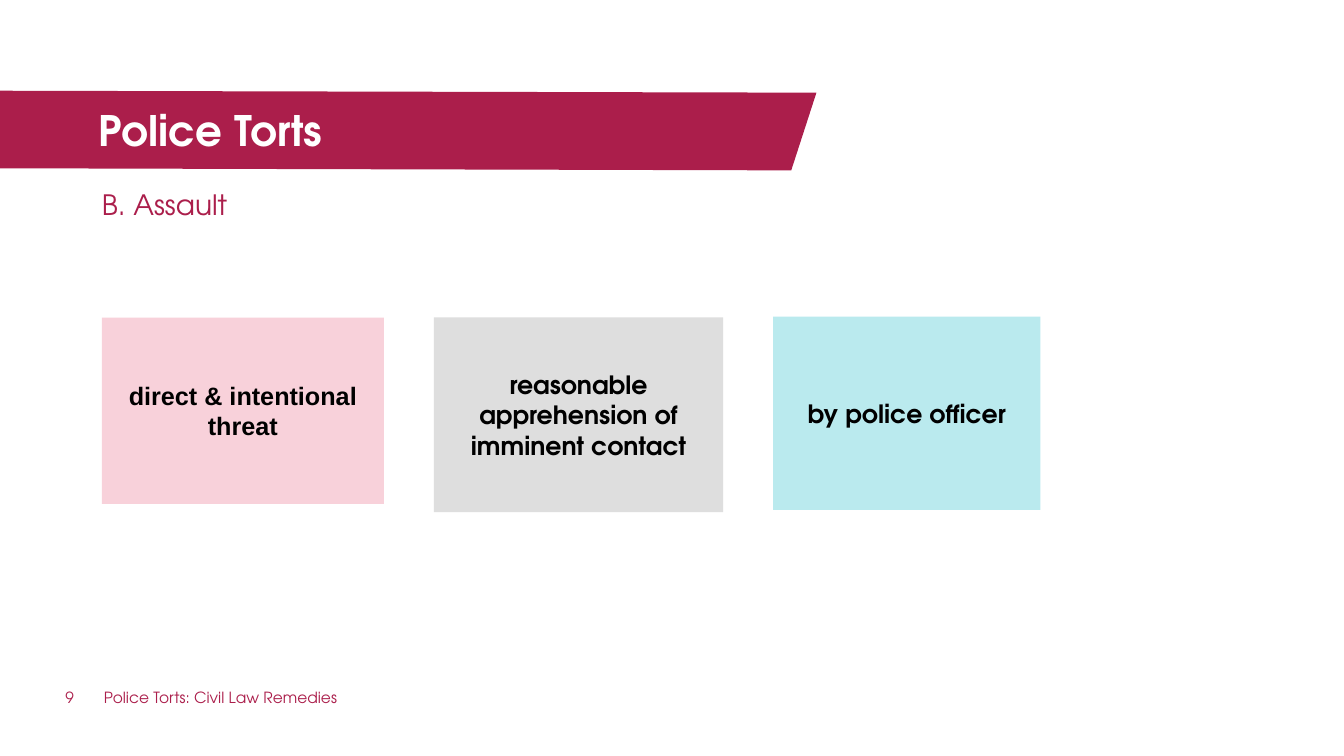
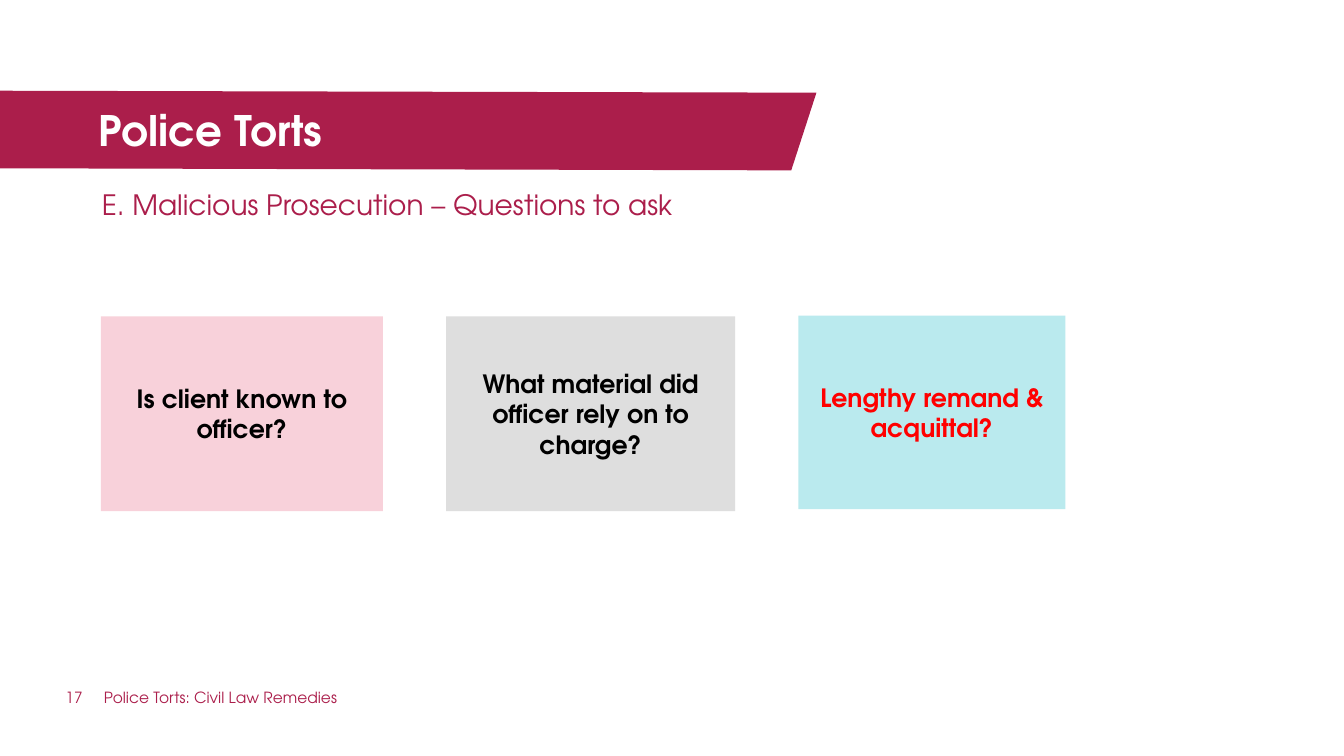
from pptx import Presentation
from pptx.dml.color import RGBColor
from pptx.enum.shapes import MSO_SHAPE
from pptx.enum.text import MSO_ANCHOR, PP_ALIGN
from pptx.util import Pt

CRIMSON = RGBColor(0xAB, 0x1E, 0x4B)
WHITE = RGBColor(0xFF, 0xFF, 0xFF)
BLACK = RGBColor(0, 0, 0)
RED = RGBColor(0xFF, 0, 0)
PINK = RGBColor(0xF8, 0xD1, 0xDA)
GREY = RGBColor(0xDE, 0xDE, 0xDE)
AQUA = RGBColor(0xBA, 0xEA, 0xEE)

FONT = "TeX Gyre Adventor"
TITLE = dict(name=FONT, size=Pt(30), bold=True, color=WHITE)
SUBTITLE = dict(name=FONT, size=Pt(20), color=CRIMSON)
FOOTER = dict(name=FONT, size=Pt(11), color=CRIMSON)
CARD = dict(name=FONT, size=Pt(18), bold=True, color=BLACK)

# Card columns: fill, width, offset from the top of the row
COLUMNS = [(PINK, 201.6, 0), (GREY, 206.6, 0), (AQUA, 190.8, -0.7)]
BAND = [(0, 64.8), (583.2, 66.2), (565.2, 121.7), (0, 120.2)]


class Deck:
    def __init__(self):
        self.prs = Presentation()
        self.prs.slide_width, self.prs.slide_height = Pt(960), Pt(540)
        self.s = None

    def fill_text(self, tf, text, style, **paragraph):
        tf.word_wrap = True
        p = tf.paragraphs[0]
        for key, value in paragraph.items():
            setattr(p, key, value)
        r = p.add_run()
        r.text = text
        for key, value in style.items():
            if key == "color":
                r.font.color.rgb = value
            else:
                setattr(r.font, key, value)

    def paint(self, sp, color):
        sp.shadow.inherit = False
        sp.fill.solid()
        sp.fill.fore_color.rgb = color
        sp.line.fill.background()

    def text(self, x, y, w, h, text, style, **paragraph):
        tf = self.s.shapes.add_textbox(Pt(x), Pt(y), Pt(w), Pt(h)).text_frame
        tf.margin_left = tf.margin_top = tf.margin_right = tf.margin_bottom = 0
        self.fill_text(tf, text, style, **paragraph)

    def band(self):
        start, *rest = [(Pt(x), Pt(y)) for x, y in BAND]
        builder = self.s.shapes.build_freeform(*start)
        builder.add_line_segments(rest, close=True)
        self.paint(builder.convert_to_shape(), CRIMSON)

    def card(self, x, y, w, h, fill, text, style):
        sp = self.s.shapes.add_shape(MSO_SHAPE.RECTANGLE, Pt(x), Pt(y), Pt(w), Pt(h))
        self.paint(sp, fill)
        sp.text_frame.vertical_anchor = MSO_ANCHOR.MIDDLE
        self.fill_text(sp.text_frame, text, style, alignment=PP_ALIGN.CENTER)

    def card_row(self, x, y, gap, cards):
        for (fill, w, dy), (text, h, changes) in zip(COLUMNS, cards):
            self.card(x, y + dy, w, h, fill, text, {**CARD, **changes})
            x += w + gap

    def slide(self, number, subtitle):
        self.s = self.prs.slides.add_slide(self.prs.slide_layouts[6])
        # Title band
        self.band()
        self.text(70.6, 74.9, 491, 35.3, "Police Torts", TITLE)
        self.text(72.7, 128.9, 782.6, 33.8, subtitle, SUBTITLE,
                  line_spacing=1.2, space_after=Pt(2))
        # Footer
        self.text(46.8, 491.8, 26.6, 25.2, str(number), FOOTER)
        self.text(74.2, 491.8, 442, 25.2, "Police Torts: Civil Law Remedies", FOOTER)


def main():
    deck = Deck()

    # Assault: elements of the tort
    deck.slide(9, "B. Assault")
    deck.card_row(72.7, 226.8, 35.7, [
        ("direct & intentional threat", 133.2, dict(name="Arial")),
        ("reasonable apprehension of imminent contact", 139, {}),
        ("by police officer", 138.2, {}),
    ])

    # Malicious prosecution: questions
    deck.slide(17, "E. Malicious Prosecution – Questions to ask")
    deck.card_row(72, 226.1, 45, [
        ("Is client known to officer?", 139, {}),
        ("What material did officer rely on to charge?", 139, {}),
        ("Lengthy remand & acquittal?", 138.2, dict(color=RED)),
    ])

    deck.prs.save("out.pptx")


if __name__ == "__main__":
    main()
